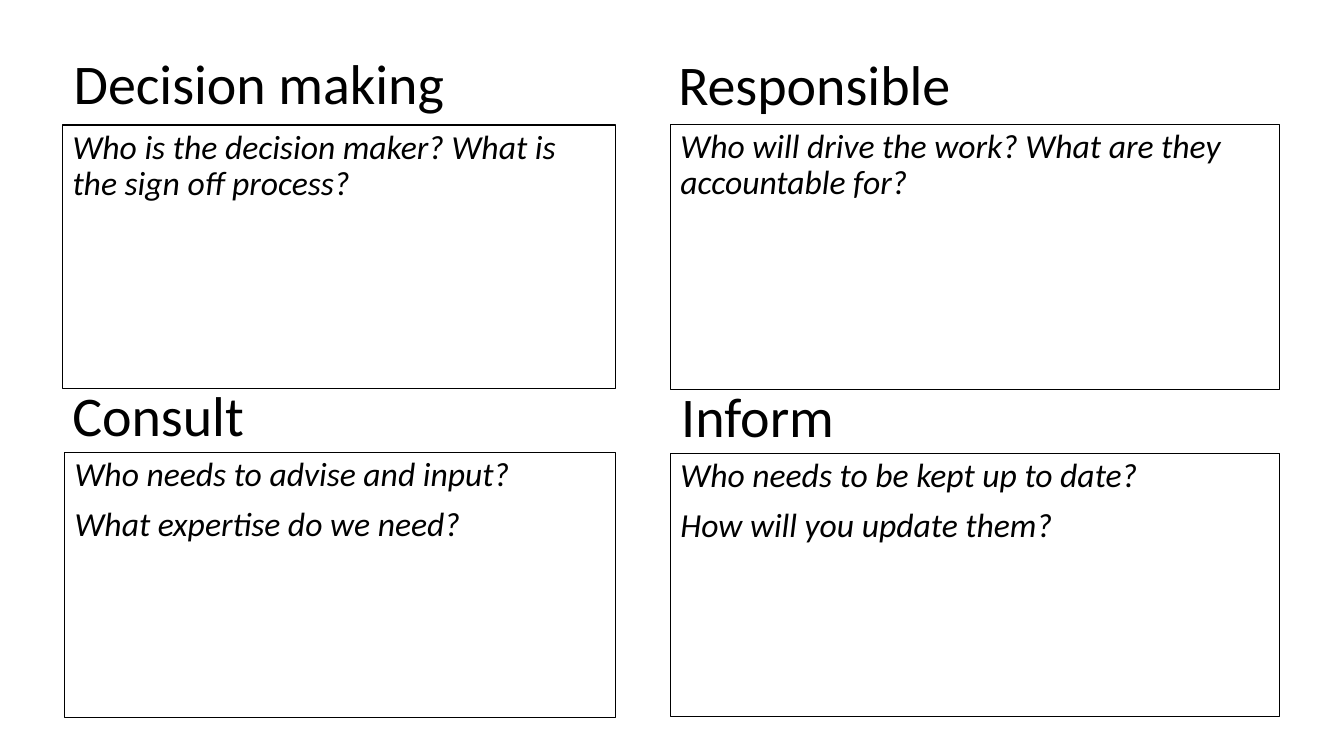
"""Build a four-part slide on decision roles: decide, responsible, consult, inform."""
import pptx
import pptx.dml.color
import pptx.enum.text
import pptx.oxml.ns
import pptx.util
from lxml import etree

Pt = pptx.util.Pt
COLORS = {"ink": "000000", "paper": "FFFFFF"}
FONT = "Calibri"

SECTIONS = [
    ("Decision making", (45.4, 34.6, 281.5, 52.6),
     ["Who is the decision maker? What is the sign off process?"], (44.6, 89.3, 395.3, 187.9)),
    ("Responsible", (477.4, 35.3, 281.5, 52.6),
     ["Who will drive the work? What are they accountable for?"], (478.8, 88.6, 434.9, 189.4)),
    ("Consult", (44.6, 271.4, 305.3, 52.6),
     ["Who needs to advise and input?", "What expertise do we need?"],
     (46.1, 323.3, 393.8, 189.4)),
    ("Inform", (479.5, 272.2, 483.1, 52.6),
     ["Who needs to be kept up to date?", "How will you update them?"],
     (478.8, 324, 434.9, 187.9)),
]


def rgb(name):
    return pptx.dml.color.RGBColor.from_string(COLORS[name])


def place(sp, box):
    sp.left, sp.top, sp.width, sp.height = map(Pt, box)


def write(sp, lines, size, anchor, italic=False, before=0):
    tf = sp.text_frame
    tf.text = "\n".join(lines)
    tf.word_wrap = True
    tf.auto_size = pptx.enum.text.MSO_AUTO_SIZE.NONE
    tf.vertical_anchor = anchor
    for p in tf.paragraphs:
        p.alignment = pptx.enum.text.PP_ALIGN.LEFT
        p.line_spacing = 0.9
        p.space_before = Pt(before)
        p.font.name = FONT
        p.font.size = Pt(size)
        p.font.bold = False
        p.font.italic = italic
        p.font.color.rgb = rgb("ink")


def add_heading(sp, text, box):
    place(sp, box)
    write(sp, [text], 40, pptx.enum.text.MSO_ANCHOR.BOTTOM)


def add_panel(sp, lines, box):
    place(sp, box)
    sp.line.color.rgb = rgb("ink")
    sp.line.width = Pt(0.75)
    write(sp, lines, 24, pptx.enum.text.MSO_ANCHOR.TOP, italic=True, before=10)
    for p in sp.text_frame.paragraphs:
        pPr = p._p.get_or_add_pPr()
        pPr.set("marL", "0")
        pPr.set("indent", "0")
        bullet = etree.Element(pptx.oxml.ns.qn("a:buNone"))
        pPr.find(pptx.oxml.ns.qn("a:spcBef")).addnext(bullet)


def main():
    prs = pptx.Presentation()
    prs.slide_width, prs.slide_height = Pt(960), Pt(540)
    s = prs.slides.add_slide(prs.slide_layouts.get_by_name("Comparison"))
    s.background.fill.solid()
    s.background.fill.fore_color.rgb = rgb("paper")
    title, *panels = s.placeholders
    for i, (heading, heading_box, lines, panel_box) in enumerate(SECTIONS):
        sp = title if i == 0 else s.shapes.add_textbox(*map(Pt, heading_box))
        add_heading(sp, heading, heading_box)
        add_panel(panels[i], lines, panel_box)
    prs.save("out.pptx")


if __name__ == "__main__":
    main()
